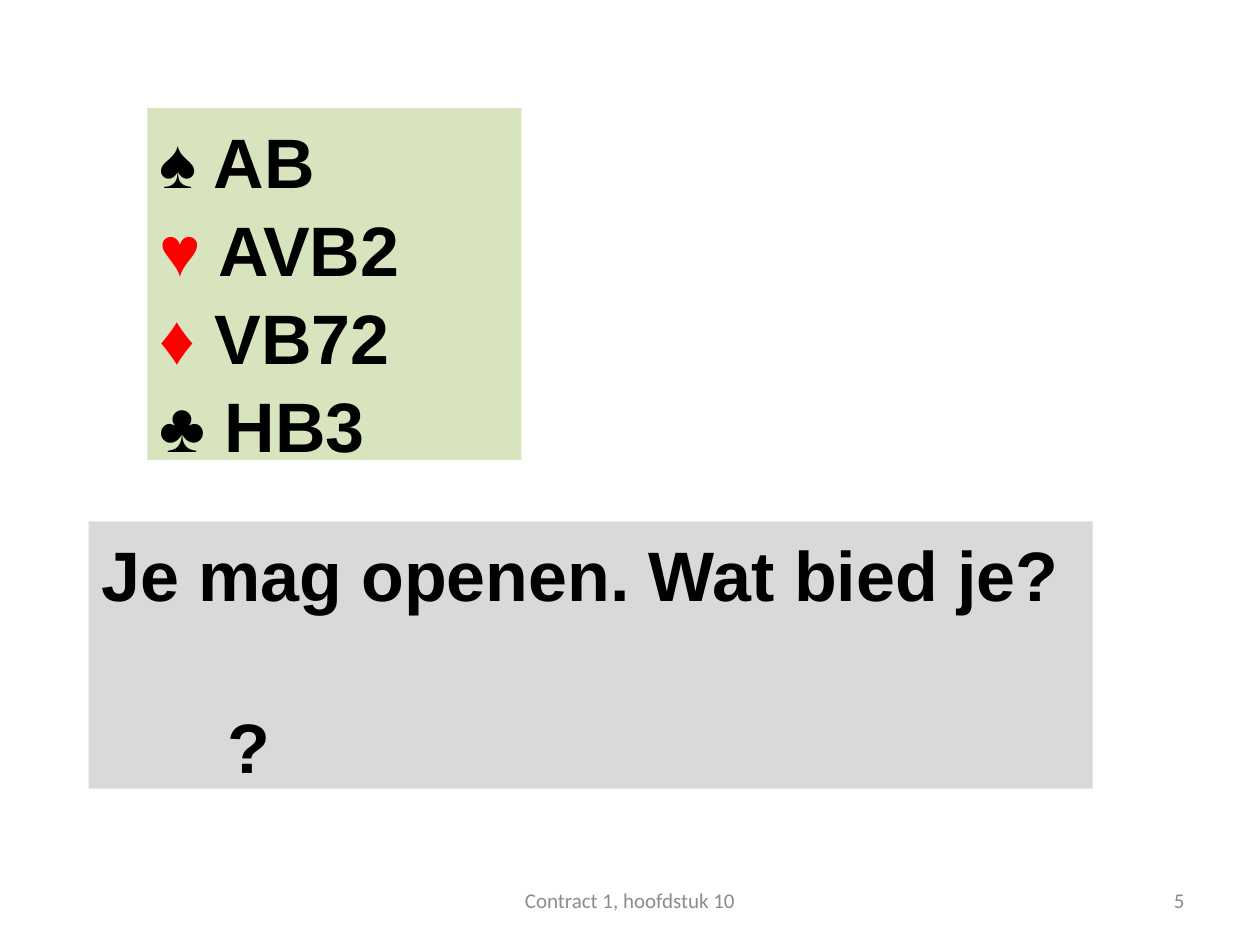
from dataclasses import dataclass

from pptx import Presentation
from pptx.dml.color import RGBColor
from pptx.enum.shapes import MSO_SHAPE as Shape
from pptx.enum.text import MSO_ANCHOR as Anchor, PP_ALIGN as Align
from pptx.util import Cm, Pt


@dataclass(frozen=True)
class Theme:
    hand_fill: str = "D7E4BD"
    question_fill: str = "D9D9D9"
    ink: str = "000000"
    red_suit: str = "FF0000"
    muted: str = "8C8C8C"
    body_font: str = "Arial"
    footer_font: str = "Calibri"
    body_size: int = 40
    footer_size: int = 12
    line_spacing: float = 1.05


THEME = Theme()
HAND = [("♠", "AB"), ("♥", "AVB2"), ("♦", "VB72"), ("♣", "HB3")]
RED_SUITS = "♥♦"


def style_body(run, color=THEME.ink):
    run.font.name = THEME.body_font
    run.font.size = Pt(THEME.body_size)
    run.font.bold = True
    run.font.color.rgb = RGBColor.from_string(color)


def add_panel(slide, left, top, width, height, fill, lines):
    panel = slide.shapes.add_shape(
        Shape.RECTANGLE, Cm(left), Cm(top), Cm(width), Cm(height))
    panel.shadow.inherit = False
    panel.fill.solid()
    panel.fill.fore_color.rgb = RGBColor.from_string(fill)
    panel.line.fill.background()
    frame = panel.text_frame
    frame.word_wrap = True
    frame.vertical_anchor = Anchor.TOP
    frame.text = "\n".join(lines)
    for line in frame.paragraphs:
        line.alignment = Align.LEFT
        line.line_spacing = THEME.line_spacing
        for run in line.runs:
            style_body(run)
    return frame.paragraphs


def add_hand(slide):
    lines = add_panel(slide, 2.97, 2.18, 7.54, 7.09, THEME.hand_fill,
                      [suit for suit, cards in HAND])
    for line, (suit, cards) in zip(lines, HAND):
        if suit in RED_SUITS:
            style_body(line.runs[0], THEME.red_suit)
        holding = line.add_run()
        holding.text = f" {cards}"
        style_body(holding)


def add_question(slide):
    question, answer = add_panel(
        slide, 1.79, 10.51, 20.24, 5.39, THEME.question_fill,
        ["Je mag openen. Wat bied je?", "?"])
    answer.space_before = Pt(48)
    answer_format = answer._p.get_or_add_pPr()
    answer_format.set("marL", str(Cm(2.54)))
    answer_format.set("indent", "0")


def add_footer(slide, left, width, text, alignment):
    footer = slide.shapes.add_textbox(Cm(left), Cm(17.65), Cm(width), Cm(1.01))
    frame = footer.text_frame
    frame.word_wrap = True
    frame.vertical_anchor = Anchor.MIDDLE
    frame.text = text
    line = frame.paragraphs[0]
    line.alignment = alignment
    font = line.runs[0].font
    font.name = THEME.footer_font
    font.size = Pt(THEME.footer_size)
    font.color.rgb = RGBColor.from_string(THEME.muted)


def main():
    deck = Presentation()
    deck.slide_width, deck.slide_height = Cm(25.4), Cm(19.05)
    slide = deck.slides.add_slide(deck.slide_layouts[6])
    add_hand(slide)
    add_question(slide)
    add_footer(slide, 18.2, 5.93, "5", Align.RIGHT)
    add_footer(slide, 8.68, 8.04, "Contract 1, hoofdstuk 10", Align.CENTER)
    deck.save("out.pptx")


if __name__ == "__main__":
    main()
